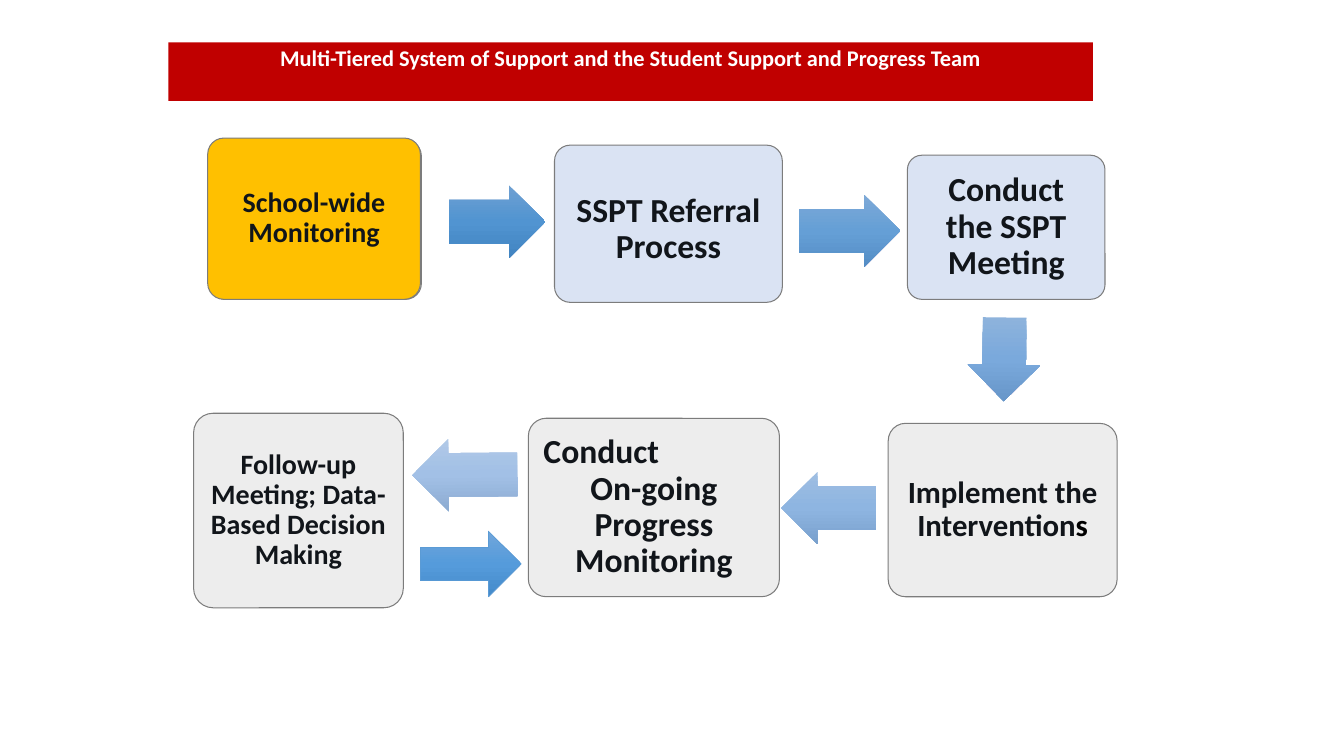
from copy import deepcopy
from dataclasses import dataclass

from pptx import Presentation
from pptx.dml.color import RGBColor
from pptx.enum import shapes, text
from pptx.oxml import ns
from pptx.util import Inches, Pt

FONT = "Calibri"
WHITE = RGBColor(0xFF, 0xFF, 0xFF)
BLACK = RGBColor(0, 0, 0)
INK = RGBColor(0x11, 0x15, 0x1A)
RED = RGBColor(0xC0, 0, 0)
GOLD = RGBColor(0xFF, 0xC0, 0)
PALE = RGBColor(0xDA, 0xE3, 0xF3)
GRAY = RGBColor(0xED, 0xED, 0xED)
EDGE = RGBColor(0x7C, 0x7C, 0x7C)
BLUE = RGBColor(0x5B, 0x9B, 0xD5)

Kind = shapes.MSO_SHAPE
Align = text.PP_ALIGN


@dataclass
class Card:
    box: tuple[float, float, float, float]
    fill: RGBColor
    words: str = ""
    size: int = 24
    inset: float = 0.1
    drop: float = 0     # extra top inset that lowers the words
    tail: str = ""      # last letters, set in black


@dataclass
class Arrow:
    box: tuple[float, float, float, float]
    stops: tuple[str, str, str]
    kind: Kind = Kind.RIGHT_ARROW
    turn: float = 0
    shaft: float = 0.6
    edge: bool = False


CARDS = [
    Card((2.08, 1.39, 2.1, 1.58), PALE),
    Card((2.06, 1.37, 2.11, 1.6), GOLD, "School-wide Monitoring", 20, 0.08),
    Card((5.5, 1.44, 2.26, 1.56), PALE, "SSPT Referral Process", drop=0.12),
    Card((9, 1.54, 1.96, 1.43), PALE, "Conduct the SSPT Meeting"),
    Card((8.81, 4.2, 2.27, 1.72), GRAY, "Implement the Intervention", 22, 0.09,
         tail="s"),
    Card((5.24, 4.15, 2.49, 1.77), GRAY,
         "Conduct\nOn-going Progress Monitoring"),
    Card((1.92, 4.1, 2.08, 1.93), GRAY,
         "Follow-up Meeting; Data-Based Decision Making", 20, 0.08),
]

ARROWS = [
    Arrow((4.45, 1.84, 0.96, 0.72), ("6EA0D2", "5194D1", "4184C1")),
    Arrow((7.92, 1.93, 1.01, 0.72), ("7DA9D7", "659FD6", "548DC5")),
    Arrow((9.6, 3.15, 0.72, 0.83), ("8EB3DC", "7AA9DC", "6796C9"),
          Kind.DOWN_ARROW, 0.7),
    Arrow((7.75, 4.68, 0.94, 0.72), ("9FBEE2", "8EB5E1", "79A0CD"),
          Kind.LEFT_ARROW),
    Arrow((4.09, 4.35, 1.04, 0.72), ("B1C9E7", "A2C0E6", "8CABD1"),
          Kind.LEFT_ARROW, -0.5),
    Arrow((4.17, 5.27, 1, 0.65), ("71A6DB", "559BDB", "448ACA"),
          shaft=0.5, edge=True),
]


def style(run, size: int, color: RGBColor) -> None:
    run.font.name = FONT
    run.font.size = Pt(size)
    run.font.bold = True
    run.font.color.rgb = color


def add_title(slide, words: str) -> None:
    bar = slide.shapes.title
    bar.left, bar.top = Inches(1.67), Inches(0.42)
    bar.width, bar.height = Inches(9.17), Inches(0.58)
    bar.fill.solid()
    bar.fill.fore_color.rgb = RED
    frame = bar.text_frame
    frame.text = words
    frame.auto_size = text.MSO_AUTO_SIZE.NONE
    frame.vertical_anchor = text.MSO_ANCHOR.TOP
    line = frame.paragraphs[0]
    line.alignment = Align.CENTER
    line.line_spacing = 0.9
    line.space_before = Pt(0)
    style(line.runs[0], 16, WHITE)


def add_card(slide, card: Card) -> None:
    shape = slide.shapes.add_shape(Kind.ROUNDED_RECTANGLE,
                                   *map(Inches, card.box))
    shape.shadow.inherit = False
    shape.adjustments[0] = 0.1
    shape.fill.solid()
    shape.fill.fore_color.rgb = card.fill
    shape.line.color.rgb = EDGE
    shape.line.width = Pt(0.75)
    if not card.words:
        return
    frame = shape.text_frame
    frame.text = card.words
    frame.word_wrap = True
    frame.vertical_anchor = text.MSO_ANCHOR.MIDDLE
    frame.margin_left = frame.margin_right = Inches(card.inset)
    frame.margin_bottom = Inches(card.inset)
    frame.margin_top = Inches(card.inset + card.drop)
    for line in frame.paragraphs:
        line.alignment = Align.CENTER
        line.line_spacing = 0.9
        style(line.runs[0], card.size, INK)
    if len(frame.paragraphs) > 1:
        frame.paragraphs[0].alignment = Align.LEFT
    if card.tail:
        run = frame.paragraphs[-1].add_run()
        run.text = card.tail
        style(run, card.size, BLACK)


def shade(shape, colors: tuple[str, str, str]) -> None:
    """Fill from top to bottom with three evenly spaced colours."""
    shape.fill.gradient()
    shape.fill.gradient_angle = 270
    stops = shape.element.spPr.find(".//" + ns.qn("a:gsLst"))
    stops.insert(1, deepcopy(stops[0]))
    for i, (stop, color) in enumerate(zip(shape.fill.gradient_stops, colors)):
        stop.position = i / 2
        stop.color.rgb = RGBColor.from_string(color)


def add_arrow(slide, arrow: Arrow) -> None:
    shape = slide.shapes.add_shape(arrow.kind, *map(Inches, arrow.box))
    shape.shadow.inherit = False
    shape.adjustments[0] = arrow.shaft
    shape.adjustments[1] = 0.5
    shape.rotation = arrow.turn
    shade(shape, arrow.stops)
    if arrow.edge:
        shape.line.color.rgb = BLUE
        shape.line.width = Pt(0.5)
    else:
        shape.line.fill.background()


def main() -> None:
    deck = Presentation()
    deck.slide_width, deck.slide_height = Inches(13.33), Inches(7.5)
    slide = deck.slides.add_slide(deck.slide_layouts[5])
    add_title(slide, "Multi-Tiered System of Support and the "
                     "Student Support and Progress Team")
    for card in CARDS:
        add_card(slide, card)
    for arrow in ARROWS:
        add_arrow(slide, arrow)
    deck.save("out.pptx")


if __name__ == "__main__":
    main()
